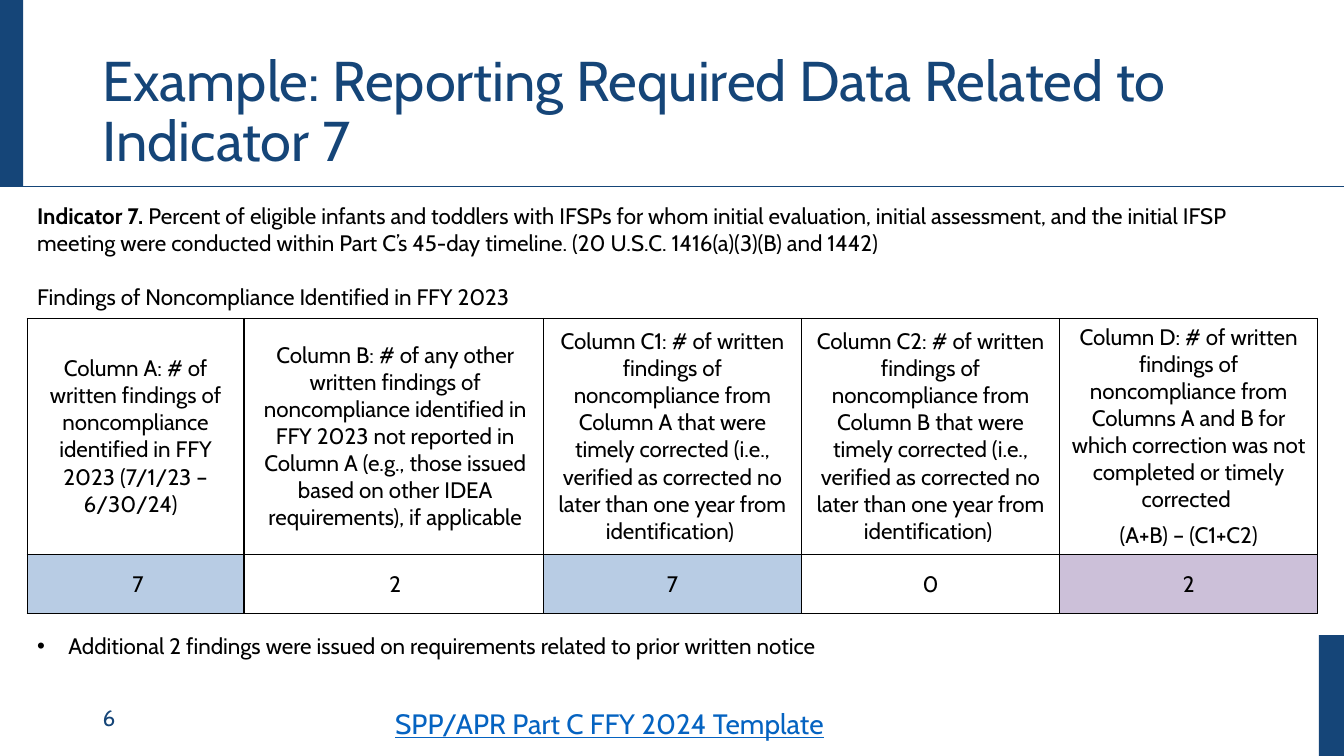
from dataclasses import dataclass

from lxml import etree
from pptx import Presentation
from pptx.dml.color import RGBColor
from pptx.enum.shapes import MSO_CONNECTOR, MSO_SHAPE
from pptx.enum.text import MSO_ANCHOR, MSO_AUTO_SIZE, PP_ALIGN
from pptx.oxml.ns import qn
from pptx.util import Inches, Pt

RECT = MSO_SHAPE.RECTANGLE
STRAIGHT = MSO_CONNECTOR.STRAIGHT
TOP, MIDDLE = MSO_ANCHOR.TOP, MSO_ANCHOR.MIDDLE
GROW = MSO_AUTO_SIZE.SHAPE_TO_FIT_TEXT
CENTER = PP_ALIGN.CENTER


@dataclass(frozen=True)
class Theme:
    font: str = "Cabin"
    navy: str = "154578"
    black: str = "000000"
    white: str = "FFFFFF"
    link: str = "0563C1"
    blue: str = "B8CCE4"
    mauve: str = "CCC0D9"
    title: int = 40
    large: int = 20
    body: int = 16


def apply(target, values):
    for name, value in values.items():
        setattr(target, name, value)


def paint(fill, color):
    fill.solid()
    fill.fore_color.rgb = RGBColor.from_string(color)


class Slide:
    def __init__(self, deck, theme):
        self.theme = theme
        self.shapes = deck.slides.add_slide(deck.slide_layouts[6]).shapes

    def add_text(self, para, text, color=None, size=None, form=None, **font):
        run = para.add_run()
        run.text = text
        size = Pt(size or self.theme.body)
        apply(run.font, {"name": self.theme.font, "size": size, **font})
        run.font.color.rgb = RGBColor.from_string(color or self.theme.black)
        apply(para, form or {})

    def indent(self, para, left, first=0, mark=None):
        props = para._p.get_or_add_pPr()
        props.set("marL", str(Inches(left)))
        props.set("indent", str(Inches(first)))
        if mark:
            etree.SubElement(props, qn("a:buFont"), typeface="Arial")
            etree.SubElement(props, qn("a:buChar"), char=mark)

    def box(self, place, **frame):
        text = self.shapes.add_textbox(*map(Inches, place)).text_frame
        apply(text, {"word_wrap": True, "vertical_anchor": TOP, **frame})
        return text

    def bar(self, place):
        shape = self.shapes.add_shape(RECT, *map(Inches, place))
        shape.shadow.inherit = False
        paint(shape.fill, self.theme.navy)
        shape.line.fill.background()

    def rule(self, ends):
        line = self.shapes.add_connector(STRAIGHT, *map(Inches, ends))
        line.line.width = Pt(0.5)
        paint(line.line.fill, self.theme.navy)
        etree.SubElement(line._element.spPr, qn("a:effectLst"))

    def border(self, cell):
        props = cell._tc.get_or_add_tcPr()
        for side in ("lnL", "lnR", "lnT", "lnB"):
            line = etree.SubElement(props, qn(f"a:{side}"), w=str(Pt(1)))
            fill = etree.SubElement(line, qn("a:solidFill"))
            etree.SubElement(fill, qn("a:srgbClr"), val=self.theme.black)

    def fill_cell(self, cell, lines, color, left):
        self.border(cell)
        paint(cell.fill, color)
        apply(cell, {
            "vertical_anchor": MIDDLE,
            "margin_left": Inches(0.07), "margin_right": Inches(0.07),
            "margin_top": 0, "margin_bottom": 0,
        })
        text = cell.text_frame
        for num, line in enumerate(lines):
            para = text.add_paragraph() if num else text.paragraphs[0]
            self.indent(para, left)
            form = {"alignment": CENTER, "space_after": Pt(3)}
            form["space_before"] = Pt(3 if num else 0)
            self.add_text(para, line, form=form)

    def table(self, place, widths, heights, rows, fills, lefts):
        size = len(heights), len(widths)
        table = self.shapes.add_table(*size, *map(Inches, place)).table
        apply(table, {"first_row": False, "horz_banding": False})
        for column, width in zip(table.columns, widths):
            column.width = Inches(width)
        for row, height, cells, colors in zip(table.rows, heights, rows, fills):
            row.height = Inches(height)
            for cell, lines, color, left in zip(row.cells, cells, colors, lefts):
                self.fill_cell(cell, lines, color, left)


HEADS = [
    ["Column A: # of written findings of noncompliance identified in FFY 2023 (7/1/23 – 6/30/24)  "],
    ["Column B: # of any other written findings of noncompliance identified in FFY 2023 "
     "not reported in Column A (e.g., those issued based on other IDEA requirements), if applicable"],
    *[[f"Column C{num}: # of written findings of noncompliance from Column {name} that were timely "
       "corrected (i.e., verified as corrected no later than one year from identification) "]
      for num, name in ((1, "A"), (2, "B"))],
    ["Column D: # of written findings of noncompliance from Columns A and B "
     "for which correction was not completed or timely corrected ",
     "(A+B) – (C1+C2)"],
]
COUNTS = [[" 7"], ["2"], ["7"], ["0"], ["2"]]


def main():
    deck = Presentation()
    apply(deck, {"slide_width": Inches(13.33), "slide_height": Inches(7.5)})
    theme = Theme()
    slide = Slide(deck, theme)

    page = slide.box((0.92, 6.92, 3, 0.4), vertical_anchor=MIDDLE)
    slide.add_text(page.paragraphs[0], "6", theme.navy)
    slide.bar((-0.02, 0, 0.25, 1.85))
    slide.bar((13.08, 6.3, 0.25, 1.2))
    slide.rule((-0.02, 1.85, 13.33, 1.85))

    title = slide.box((0.92, 0.4, 11.5, 1.45), vertical_anchor=MIDDLE)
    slide.add_text(title.paragraphs[0], "Example: Reporting Required Data Related to Indicator 7",
                   theme.navy, theme.title, {"line_spacing": 0.9})

    body = slide.box((0.27, 1.96, 12.14, 4.68), auto_size=GROW)
    intro = body.paragraphs[0]
    slide.add_text(intro, "Indicator 7.", bold=True)
    slide.add_text(intro, " Percent of eligible infants and toddlers with IFSPs for whom initial "
                   "evaluation, initial assessment, and the initial IFSP meeting were conducted within "
                   "Part C’s 45-day timeline. (20 U.S.C. 1416(a)(3)(B) and 1442)")
    slide.add_text(body.add_paragraph(), "Findings of Noncompliance Identified in FFY 2023",
                   form={"space_before": Pt(19.2)})
    note = body.add_paragraph()
    slide.indent(note, 0.31, -0.31, "•")
    slide.add_text(note, "Additional 2 findings were issued on requirements related to prior written notice",
                   form={"space_before": Pt(230.4)})

    fills = [theme.blue, theme.white, theme.blue, theme.white, theme.mauve]
    slide.table((0.27, 3.16, 12.8, 2.93), [2.15, 2.97] + [2.56] * 3, [2.34, 0.59],
                [HEADS, COUNTS], [[theme.white] * 5, fills], [0, 0.03, 0, 0, 0])

    link = slide.box((3.82, 6.96, 4.55, 0.44), word_wrap=False, auto_size=GROW)
    slide.add_text(link.paragraphs[0], "SPP/APR Part C FFY 2024 Template",
                   theme.link, theme.large, underline=True)
    deck.save("out.pptx")


if __name__ == "__main__":
    main()
